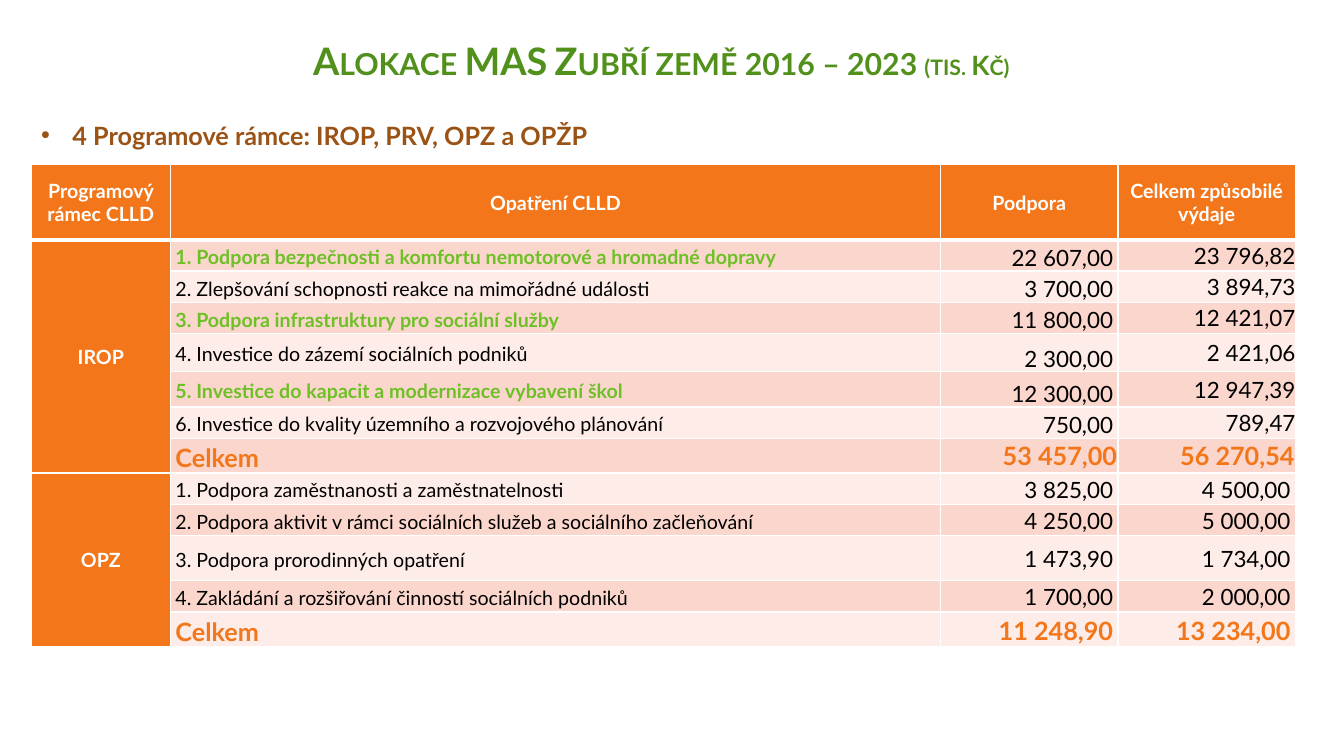
from lxml import etree
from pptx import Presentation
from pptx import util as u
from pptx.dml.color import RGBColor
from pptx.enum import text
from pptx.oxml.ns import qn

ORANGE, GREEN, BLACK, WHITE = "F3771A", "6DC025", "000000", "FFFFFF"
BANDS = "FAD6CD", "FDECE8"
LEFT, CENTER, RIGHT = text.PP_ALIGN.LEFT, text.PP_ALIGN.CENTER, text.PP_ALIGN.RIGHT
MIDDLE, BOTTOM = text.MSO_ANCHOR.MIDDLE, text.MSO_ANCHOR.BOTTOM
# Cell margins in inches: left, top, right, bottom
TIGHT, PADDED, FLUSH = (0.01, 0.01, 0.01, 0), (0.05, 0, 0.05, 0), (0, 0, 0, 0)

COLUMNS = [10.35, 57.31, 13.2, 13.2]
HEADINGS = ["Programový rámec CLLD", "Opatření CLLD", "Podpora", "Celkem způsobilé výdaje"]
HEADING_HEIGHT = 10
# Measure, support, total eligible costs, row height
FRAMEWORKS = {
    "IROP": [
        ("1. Podpora bezpečnosti a komfortu nemotorové a hromadné dopravy", "22 607,00", "23 796,82", 4.13),
        ("2. Zlepšování schopnosti reakce na mimořádné události", "3 700,00", "3 894,73", 4.13),
        ("3. Podpora infrastruktury pro sociální služby", "11 800,00", "12 421,07", 4.13),
        ("4. Investice do zázemí sociálních podniků", "2 300,00", "2 421,06", 5.07),
        ("5. Investice do kapacit a modernizace vybavení škol", "12 300,00", "12 947,39", 4.67),
        ("6. Investice do kvality územního a rozvojového plánování", "750,00", "789,47", 4.13),
        ("Celkem", "53 457,00", "56 270,54", 4.27),
    ],
    "OPZ": [
        ("1. Podpora zaměstnanosti a zaměstnatelnosti", "3 825,00", "4 500,00", 4.13),
        ("2. Podpora aktivit v rámci sociálních služeb a sociálního začleňování", "4 250,00", "5 000,00", 4.13),
        ("3. Podpora prorodinných opatření", "1 473,90", "1 734,00", 6),
        ("4. Zakládání a rozšiřování činností sociálních podniků", "1 700,00", "2 000,00", 4.13),
        ("Celkem", "11 248,90", "13 234,00", 4.13),
    ],
}
HIGHLIGHTED = ("1. Podpora bezpečnosti", "3. Podpora infrastruktury", "5. Investice")


def color(value):
    return RGBColor.from_string(value)


class SlideBuilder:
    """Draws on one slide; places and sizes are percentages of the slide."""

    font = "Lato"

    def __init__(self):
        self.deck = Presentation()
        self.deck.slide_width, self.deck.slide_height = u.Inches(13.33), u.Inches(7.5)
        self.page = self.deck.slides.add_slide(self.deck.slide_layouts[6])

    def across(self, share):
        return round(self.deck.slide_width * share / 100)

    def down(self, share):
        return round(self.deck.slide_height * share / 100)

    def area(self, left, top, width, height):
        return self.across(left), self.down(top), self.across(width), self.down(height)

    def span(self, para, words, size, ink, bold=True, small_caps=False):
        span = para.add_run()
        span.text = words
        font = span.font
        font.name, font.size, font.bold = self.font, u.Pt(size), bold
        font.color.rgb = color(ink)
        if small_caps:
            font._element.set("cap", "small")

    def box(self, area, anchor=text.MSO_ANCHOR.TOP, wrap=True):
        frame = self.page.shapes.add_textbox(*self.area(*area)).text_frame
        frame.word_wrap, frame.vertical_anchor = wrap, anchor
        return frame

    def title(self, area, spans):
        para = self.box(area, BOTTOM).paragraphs[0]
        para.alignment, para.line_spacing = CENTER, 0.9
        for words, size in spans:
            self.span(para, words, size, "52901C", small_caps=True)

    def bullet(self, area, words):
        frame = self.box(area, wrap=False)
        frame.auto_size = text.MSO_AUTO_SIZE.SHAPE_TO_FIT_TEXT
        para = frame.paragraphs[0]
        props = para._p.get_or_add_pPr()
        props.set("marL", str(u.Inches(0.31)))
        props.set("indent", str(u.Inches(-0.31)))
        etree.SubElement(props, qn("a:buFont")).set("typeface", "Arial")
        etree.SubElement(props, qn("a:buChar")).set("char", "•")
        self.span(para, words, 18, "9A5315")

    def table(self, area, widths, heights):
        table = self.page.shapes.add_table(len(heights), len(widths), *self.area(*area)).table
        for column, width in zip(table.columns, widths):
            column.width = self.across(width)
        for row, height in zip(table.rows, heights):
            row.height = self.down(height)
        return table

    def borders(self, cell, top, bottom):
        props = cell._tc.get_or_add_tcPr()
        for side, width in zip("LRTB", (1, 1, top, bottom)):
            line = etree.SubElement(props, qn(f"a:ln{side}"), w=str(u.Pt(width)))
            fill = etree.SubElement(line, qn("a:solidFill"))
            etree.SubElement(fill, qn("a:srgbClr"), val=WHITE)

    def cell(self, cell, words, fill, size=14, ink=WHITE, bold=True, align=CENTER,
             anchor=MIDDLE, margins=TIGHT, spacing=1.0, top=1, bottom=1):
        self.borders(cell, top, bottom)
        cell.fill.solid()
        cell.fill.fore_color.rgb = color(fill)
        cell.vertical_anchor = anchor
        (cell.margin_left, cell.margin_top,
         cell.margin_right, cell.margin_bottom) = map(u.Inches, margins)
        para = cell.text_frame.paragraphs[0]
        para.alignment, para.line_spacing = align, spacing
        if words:
            self.span(para, words, size, ink, bold)


def amount_styles(framework, is_total):
    """Layout of the support and the cost cell."""
    padded = dict(margins=PADDED, spacing=1.07)
    if framework == "OPZ":
        return padded, padded
    if is_total:
        return {}, {}
    return dict(padded, anchor=BOTTOM), dict(margins=FLUSH)


def fill_table(slide):
    heights = [HEADING_HEIGHT] + [entry[-1] for rows in FRAMEWORKS.values() for entry in rows]
    table = slide.table((2.33, 21.73, sum(COLUMNS), sum(heights)), COLUMNS, heights)
    for column, heading in enumerate(HEADINGS):
        slide.cell(table.cell(0, column), heading, ORANGE, bottom=3)
    row = 1
    for framework, entries in FRAMEWORKS.items():
        first = row
        for measure, support, costs, _ in entries:
            top = 3 if row == 1 else 1
            band = BANDS[(row - 1) % 2]
            is_total = measure == "Celkem"
            highlighted = framework == "IROP" and measure.startswith(HIGHLIGHTED)
            ink = ORANGE if is_total else BLACK
            slide.cell(table.cell(row, 0), framework if row == first else "", ORANGE, top=top)
            slide.cell(table.cell(row, 1), measure, band, 18 if is_total else 14,
                       GREEN if highlighted else ink, is_total or highlighted,
                       LEFT, margins=PADDED, spacing=1.15, top=top)
            styles = amount_styles(framework, is_total)
            for column, (amount, style) in enumerate(zip((support, costs), styles), 2):
                slide.cell(table.cell(row, column), amount, band, 18 if is_total else 16,
                           ink, is_total, RIGHT, top=top, **style)
            row += 1
        table.cell(first, 0).merge(table.cell(row - 1, 0))


def main():
    slide = SlideBuilder()
    fill_table(slide)
    slide.title((1.95, 3.73, 94.52, 8),
                [("Alokace MAS Zubří země 2016 – 2023", 27), (" ", 26), ("(tis. Kč)", 19)])
    slide.bullet((2.33, 15.2, 49.81, 5.33), "4 Programové rámce: IROP, PRV, OPZ a OPŽP")
    slide.deck.save("out.pptx")


if __name__ == "__main__":
    main()
